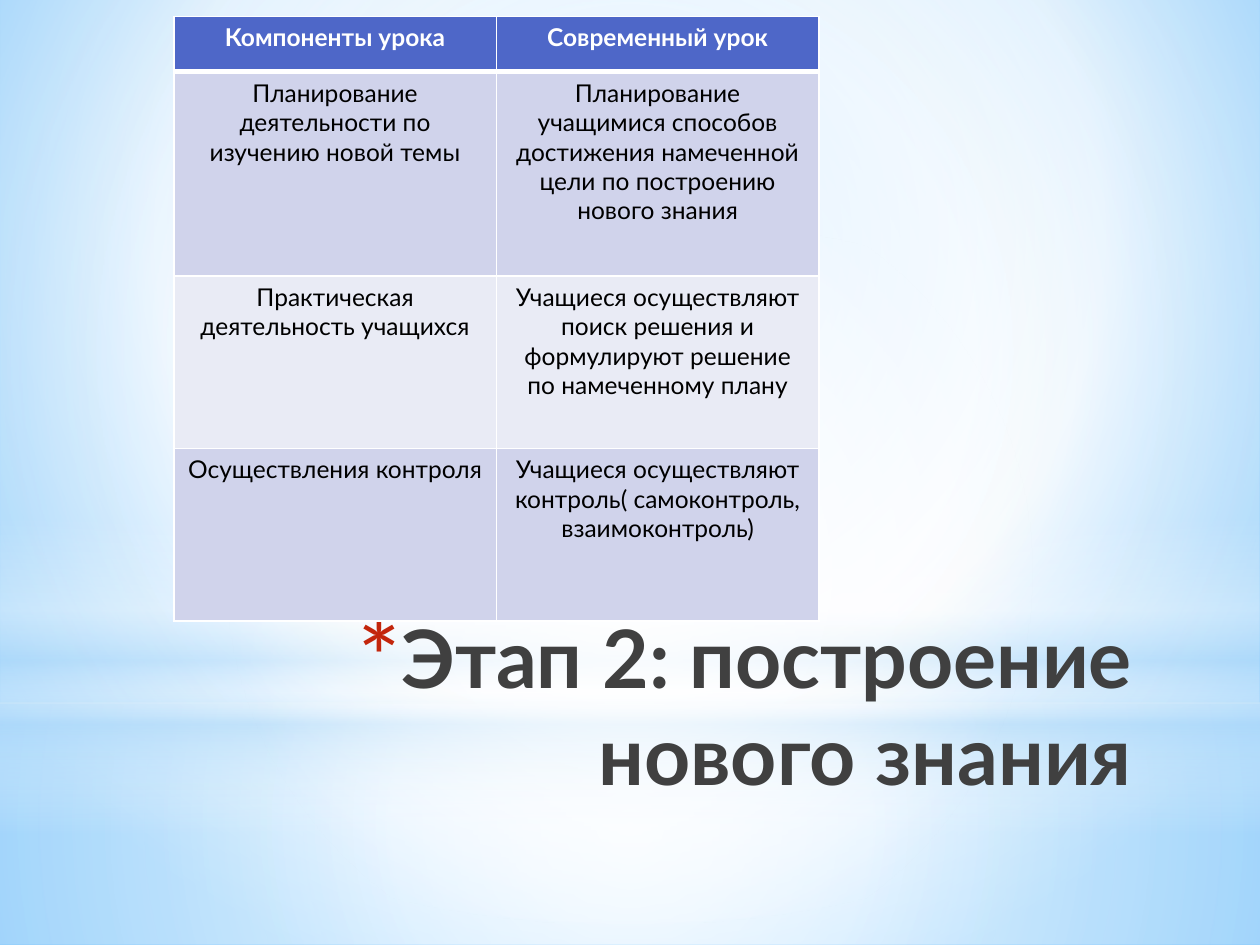
from dataclasses import dataclass
from typing import Any

from lxml import etree
from pptx import Presentation
from pptx import util as u
from pptx.dml.color import RGBColor
from pptx.enum import shapes, text
from pptx.oxml.ns import qn

COLORS = {
    "white": "FFFFFF", "black": "000000", "sky": "9ED5FF", "azure": "5BB9FF",
    "mist": "B4DCFA", "header": "4E67C8", "odd": "D0D3EB", "even": "E9EBF5",
    "title": "404040", "bullet": "C3260C",
}
FONT = "Lato"
CENTER = (50, 50, 50, 50)


@dataclass(frozen=True)
class Stop:
    pos: int
    color: str
    alpha: int = 100


@dataclass(frozen=True)
class Glow:
    kind: Any
    top: float
    height: float
    stops: tuple[Stop, ...]
    focus: tuple[int, ...] | None = CENTER


@dataclass(frozen=True)
class Row:
    height: float
    fill: str
    cells: tuple[str, str]


BACKDROP = (Stop(0, "sky"), Stop(60, "white"), Stop(100, "azure"))
RECT, OVAL = shapes.MSO_SHAPE.RECTANGLE, shapes.MSO_SHAPE.OVAL
GLOWS = (
    Glow(RECT, 5.58, 1.92, (Stop(0, "white", 91), Stop(37, "white", 76), Stop(100, "mist", 79))),
    Glow(RECT, 0, 5.58, (Stop(0, "white", 89), Stop(48, "white", 62), Stop(100, "mist", 79))),
    Glow(RECT, 4.12, 2.5, (
        Stop(0, "white", 0), Stop(29, "white", 30), Stop(45, "mist", 40),
        Stop(55, "white", 26), Stop(65, "mist", 60), Stop(100, "white", 0)), None),
    Glow(OVAL, 1.75, 5.58, (Stop(0, "white"), Stop(56, "white", 0))),
)
ROWS = (
    Row(0.44, "header", ("Компоненты урока", "Современный урок")),
    Row(1.62, "odd", (
        "Планирование деятельности по изучению новой темы",
        "Планирование учащимися способов достижения намеченной цели по построению нового знания")),
    Row(1.37, "even", (
        "Практическая деятельность учащихся",
        "Учащиеся осуществляют поиск решения и формулируют решение по намеченному плану")),
    Row(1.37, "odd", (
        "Осуществления контроля",
        "Учащиеся осуществляют контроль( самоконтроль, взаимоконтроль)")),
)


def rgb(name: str) -> RGBColor:
    return RGBColor.from_string(COLORS[name])


def add_node(parent: Any, tag: str, **attrs: Any) -> Any:
    return etree.SubElement(parent, qn(tag), {key: str(value) for key, value in attrs.items()})


def paint_gradient(owner: Any, fill: Any, stops: tuple[Stop, ...], focus: tuple[int, ...] | None) -> None:
    fill.gradient()
    gradient = owner.find(f".//{qn('a:gradFill')}")
    for child in list(gradient):
        gradient.remove(child)
    stop_list = add_node(gradient, "a:gsLst")
    for stop in stops:
        mark = add_node(stop_list, "a:gs", pos=stop.pos * 1000)
        color = add_node(mark, "a:srgbClr", val=COLORS[stop.color])
        add_node(color, "a:alpha", val=stop.alpha * 1000)
    if focus is None:
        add_node(gradient, "a:lin", ang=5400000, scaled=0)
    else:
        circle = add_node(gradient, "a:path", path="circle")
        add_node(circle, "a:fillToRect", **{side: value * 1000 for side, value in zip("ltrb", focus)})


def draw_glow(slide: Any, glow: Glow) -> None:
    shape = slide.shapes.add_shape(
        glow.kind, 0, u.Inches(glow.top), u.Inches(10), u.Inches(glow.height))
    shape.shadow.inherit = False
    shape.line.fill.background()
    paint_gradient(shape.element, shape.fill, glow.stops, glow.focus)


def write(paragraph: Any, words: str, color: str, size: int, bold: bool, align: Any) -> None:
    paragraph.alignment = align
    run = paragraph.add_run()
    run.text = words
    for key, value in {"name": FONT, "size": u.Pt(size), "bold": bold}.items():
        setattr(run.font, key, value)
    run.font.color.rgb = rgb(color)


def draw_title(slide: Any) -> None:
    title = slide.shapes.add_textbox(u.Inches(1.96), u.Inches(4.78), u.Inches(7.12), u.Inches(1.25))
    frame = title.text_frame
    for key, value in {"word_wrap": True, "vertical_anchor": text.MSO_ANCHOR.TOP}.items():
        setattr(frame, key, value)
    paragraph = frame.paragraphs[0]
    props = paragraph._p.get_or_add_pPr()
    indent = u.Inches(0.35)
    props.set("marL", str(indent))
    props.set("indent", str(-indent))
    add_node(add_node(props, "a:buClr"), "a:srgbClr", val=COLORS["bullet"])
    add_node(props, "a:buSzPct", val=128000)
    add_node(props, "a:buFont", typeface=FONT)
    add_node(props, "a:buChar", char="*")
    write(paragraph, "Этап 2: построение нового знания", "title", 46, True, text.PP_ALIGN.RIGHT)


def draw_borders(cell: Any, top: int, bottom: int) -> None:
    props = cell._tc.get_or_add_tcPr()
    for side, width in {"L": 1, "R": 1, "T": top, "B": bottom}.items():
        line = add_node(props, f"a:ln{side}", w=u.Pt(width))
        add_node(add_node(line, "a:solidFill"), "a:srgbClr", val=COLORS["white"])


def draw_lesson_table(slide: Any) -> None:
    height = sum(row.height for row in ROWS)
    table = slide.shapes.add_table(
        len(ROWS), 2, u.Inches(1.38), u.Inches(0.13), u.Inches(5.12), u.Inches(height)).table
    for index, row in enumerate(ROWS):
        header = index == 0
        table.rows[index].height = u.Inches(row.height)
        for column, words in enumerate(row.cells):
            cell = table.cell(index, column)
            draw_borders(cell, 3 if index == 1 else 1, 3 if header else 1)
            cell.fill.solid()
            cell.fill.fore_color.rgb = rgb(row.fill)
            write(cell.text_frame.paragraphs[0], words, "white" if header else "black",
                  14, header, text.PP_ALIGN.CENTER)


def main() -> None:
    deck = Presentation()
    deck.slide_width, deck.slide_height = u.Inches(10), u.Inches(7.5)
    slide = deck.slides.add_slide(deck.slide_layouts[6])
    paint_gradient(slide.element, slide.background.fill, BACKDROP, (20, 10, 20, 60))
    for glow in GLOWS:
        draw_glow(slide, glow)
    draw_title(slide)
    draw_lesson_table(slide)
    deck.save("out.pptx")


if __name__ == "__main__":
    main()
